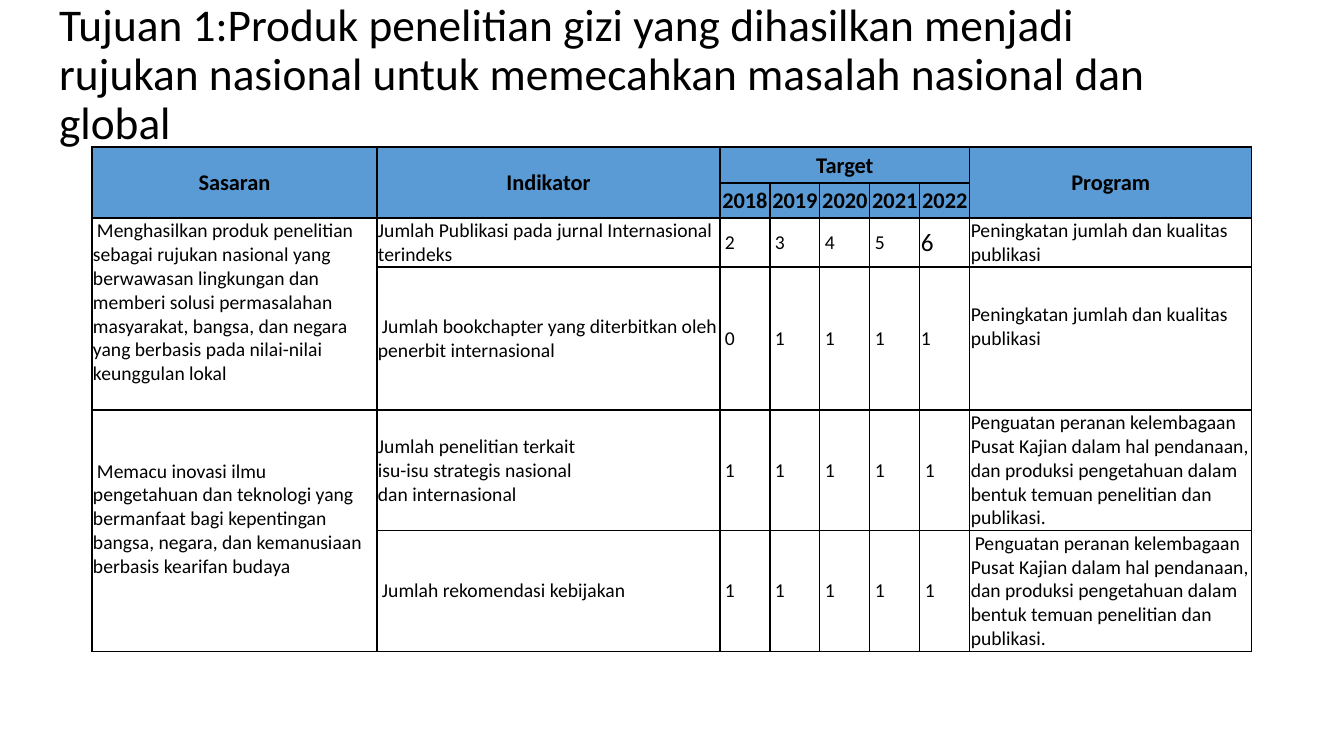
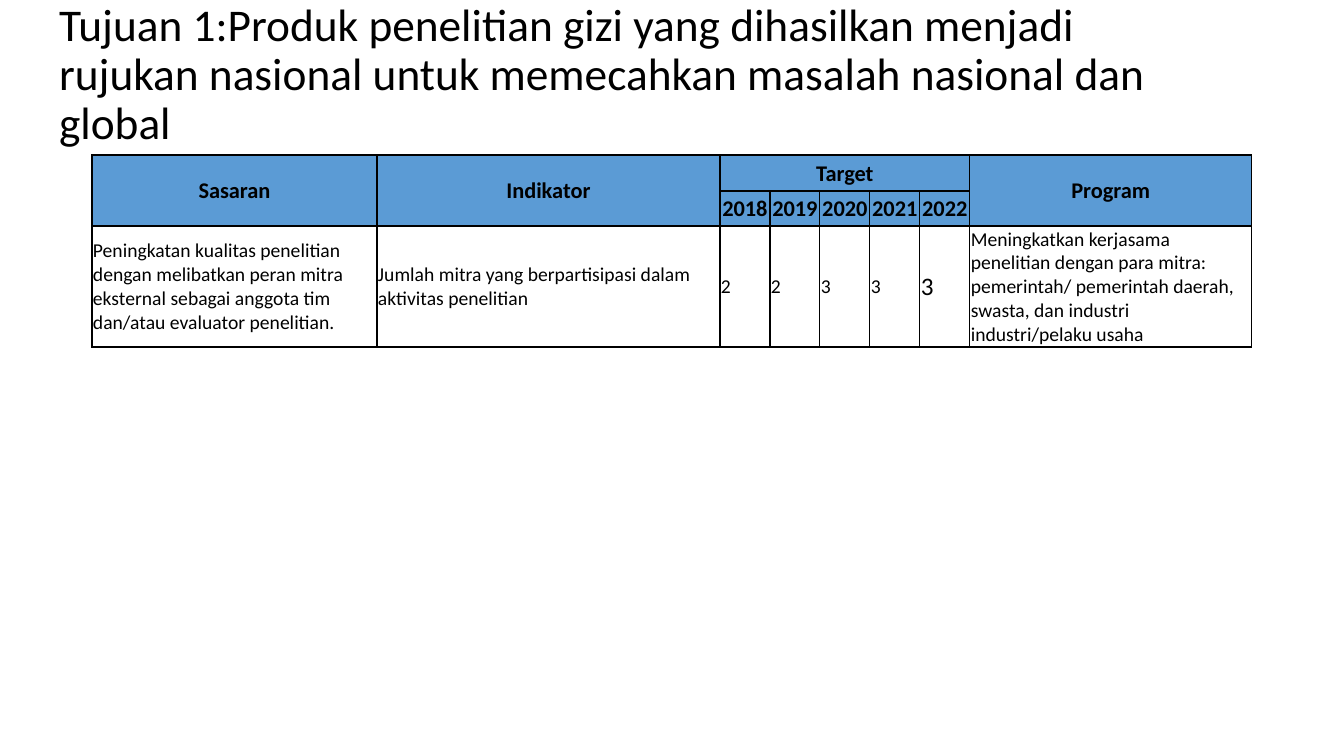
from dataclasses import dataclass

from lxml.etree import SubElement
from pptx import Presentation
from pptx.dml.color import RGBColor
from pptx.enum.text import MSO_ANCHOR as Anchor, MSO_AUTO_SIZE as AutoSize, PP_ALIGN as Align
from pptx.oxml.ns import qn
from pptx.util import Emu, Pt

BLACK = RGBColor(0x00, 0x00, 0x00)
HEADER_BLUE = RGBColor(0x5B, 0x9B, 0xD5)
FONT = "Calibri"
EMU_PER_PX = 914400 / 100.8

TITLE = ("Tujuan 1:Produk penelitian gizi yang dihasilkan menjadi rujukan nasional "
         "untuk memecahkan masalah nasional dan global")
YEARS = ["2018", "2019", "2020", "2021", "2022"]
COLUMN_WIDTHS = [285, 343] + [50] * len(YEARS) + [282]
HEADER_HEIGHTS = [36, 35]
FIRST_YEAR = 2
PROGRAM = FIRST_YEAR + len(YEARS)
TABLE_LEFT = 92
LEAD = 4
LINE = 24


def px(length):
    return Emu(round(length * EMU_PER_PX))


@dataclass
class Entry:
    text: str
    size: int = 14
    lead: int = 0
    below: int = 0


@dataclass
class Row:
    height: int
    goal: Entry | None
    indicator: Entry
    targets: list
    program: Entry


def targets(values, lead=0):
    return [Entry(value, lead=lead) for value in values]


def style_paragraph(para, size, bold=False, align=Align.LEFT):
    para.alignment = align
    para.font.name = FONT
    para.font.size = Pt(size)
    para.font.bold = bold
    para.font.color.rgb = BLACK


def add_title(slide):
    title = slide.shapes.title
    title.left, title.top, title.width, title.height = map(px, (49, 40, 1159, 72))
    frame = title.text_frame
    frame.text = TITLE
    frame.word_wrap = True
    frame.auto_size = AutoSize.NONE
    frame.vertical_anchor = Anchor.MIDDLE
    para = frame.paragraphs[0]
    para.line_spacing = 0.9
    style_paragraph(para, 32.4)


def add_borders(cell):
    properties = cell._tc.get_or_add_tcPr()
    for side in ("a:lnL", "a:lnR", "a:lnT", "a:lnB"):
        line = SubElement(properties, qn(side), w=str(Pt(1)))
        fill = SubElement(line, qn("a:solidFill"))
        SubElement(fill, qn("a:srgbClr"), val=str(BLACK))


def format_cell(cell, fill=None):
    add_borders(cell)
    if fill is None:
        cell.fill.background()
    else:
        cell.fill.solid()
        cell.fill.fore_color.rgb = fill
    cell.vertical_anchor = Anchor.MIDDLE
    cell.margin_left = cell.margin_right = cell.margin_top = px(1)
    cell.margin_bottom = 0


def write_header(cell, text):
    cell.text = text
    style_paragraph(cell.text_frame.paragraphs[0], 16, True, Align.CENTER)


def write_entry(cell, entry):
    cell.text = entry.text
    cell.margin_bottom = px(entry.below)
    for para in cell.text_frame.paragraphs:
        if entry.lead:
            para._p.get_or_add_pPr().set("indent", str(px(entry.lead)))
        style_paragraph(para, entry.size)


def fill_header(table):
    for column, text in ((0, "Sasaran"), (1, "Indikator"), (PROGRAM, "Program")):
        table.cell(0, column).merge(table.cell(1, column))
        write_header(table.cell(0, column), text)
    table.cell(0, FIRST_YEAR).merge(table.cell(0, PROGRAM - 1))
    write_header(table.cell(0, FIRST_YEAR), "Target")
    for column, year in enumerate(YEARS, FIRST_YEAR):
        write_header(table.cell(1, column), year)


def add_target_table(slide, top, rows):
    heights = HEADER_HEIGHTS + [row.height for row in rows]
    table = slide.shapes.add_table(
        len(heights), len(COLUMN_WIDTHS), px(TABLE_LEFT), px(top),
        px(sum(COLUMN_WIDTHS)), px(sum(heights))).table
    table.first_row = table.horz_banding = False
    for column, width in zip(table.columns, COLUMN_WIDTHS):
        column.width = px(width)
    for index, height in enumerate(heights):
        table.rows[index].height = px(height)
        for cell in table.rows[index].cells:
            format_cell(cell, HEADER_BLUE if index < len(HEADER_HEIGHTS) else None)
    fill_header(table)
    for index, row in enumerate(rows, len(HEADER_HEIGHTS)):
        if row.goal is None:
            table.cell(index - 1, 0).merge(table.cell(index, 0))
        entries = [row.goal, row.indicator, *row.targets, row.program]
        for column, entry in enumerate(entries):
            if entry is not None:
                write_entry(table.cell(index, column), entry)


def main():
    deck = Presentation()
    deck.slide_width, deck.slide_height = px(1344), px(756)

    quality = "Peningkatan jumlah dan kualitas publikasi"
    institution = ("Penguatan peranan kelembagaan Pusat Kajian dalam hal pendanaan, dan produksi "
                   "pengetahuan dalam bentuk temuan penelitian dan publikasi.")
    publication_rows = [
        Row(49,
            Entry("Menghasilkan produk penelitian sebagai rujukan nasional yang berwawasan "
                  "lingkungan dan memberi solusi permasalahan masyarakat, bangsa, dan negara "
                  "yang berbasis pada nilai-nilai keunggulan lokal", lead=LEAD, below=LINE),
            Entry("Jumlah Publikasi pada jurnal Internasional terindeks"),
            targets("2345", LEAD) + [Entry("6", size=18)],
            Entry(quality)),
        Row(143, None,
            Entry("Jumlah bookchapter yang diterbitkan oleh penerbit internasional", lead=LEAD),
            targets("0111", LEAD) + targets("1"),
            Entry(quality, below=LINE)),
        Row(120,
            Entry("Memacu inovasi ilmu pengetahuan dan teknologi yang bermanfaat bagi "
                  "kepentingan bangsa, negara, dan kemanusiaan berbasis kearifan budaya",
                  lead=LEAD, below=LINE),
            Entry("Jumlah penelitian terkait\nisu-isu strategis nasional\ndan internasional"),
            targets("11111", LEAD),
            Entry(institution)),
        Row(121, None,
            Entry("Jumlah rekomendasi kebijakan", lead=LEAD),
            targets("11111", LEAD),
            Entry(institution, lead=LEAD)),
    ]
    partner_rows = [
        Row(121,
            Entry("Peningkatan kualitas penelitian dengan melibatkan peran mitra eksternal "
                  "sebagai anggota tim dan/atau evaluator penelitian."),
            Entry("Jumlah mitra yang berpartisipasi dalam\naktivitas penelitian"),
            targets("2233") + [Entry("3", size=18)],
            Entry("Meningkatkan kerjasama penelitian dengan para mitra: pemerintah/ pemerintah "
                  "daerah, swasta, dan industri industri/pelaku usaha")),
    ]
    for top, rows in ((147, publication_rows), (155, partner_rows)):
        slide = deck.slides.add_slide(deck.slide_layouts.get_by_name("Title Only"))
        add_title(slide)
        add_target_table(slide, top, rows)
    deck.save("out.pptx")


if __name__ == "__main__":
    main()
